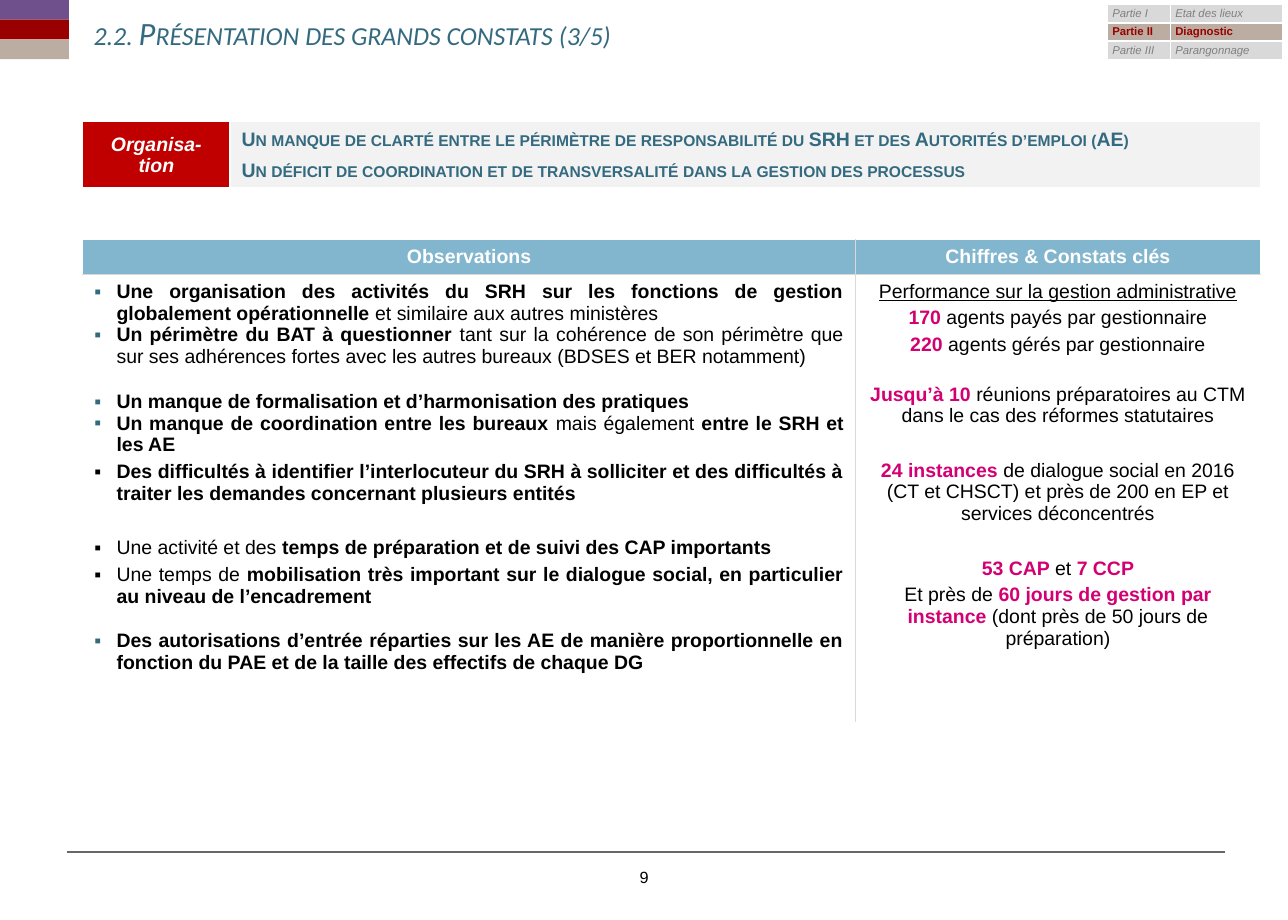
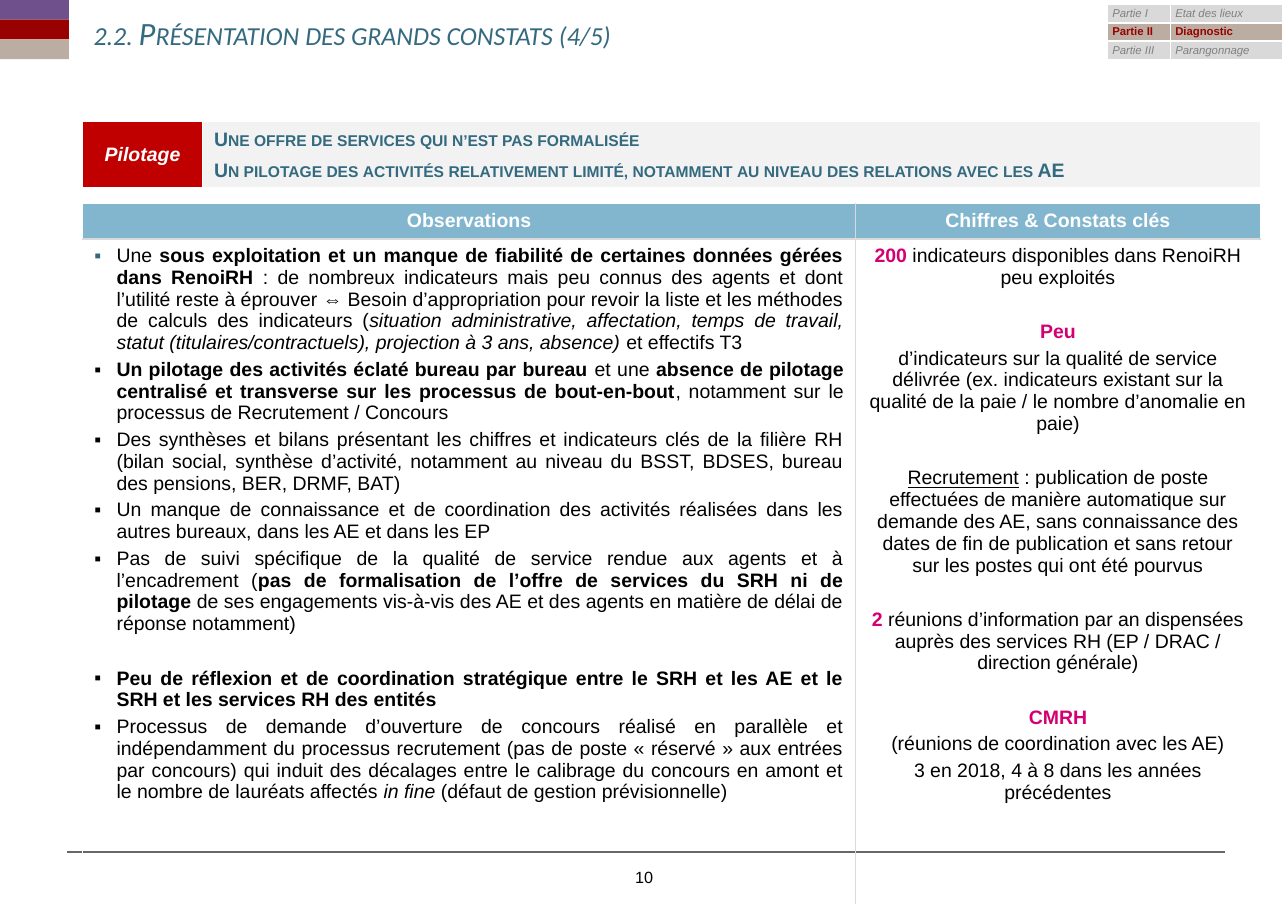
from dataclasses import dataclass
from lxml.etree import SubElement
from pptx import Presentation
from pptx.dml.color import RGBColor
from pptx.enum.shapes import MSO_CONNECTOR, MSO_SHAPE
from pptx.enum.text import MSO_ANCHOR, MSO_AUTO_SIZE, PP_ALIGN
from pptx.oxml.ns import qn
from pptx.util import Cm, Pt

RECT = MSO_SHAPE.RECTANGLE
LINE = MSO_CONNECTOR.STRAIGHT
MIDDLE = MSO_ANCHOR.MIDDLE
FIXED = MSO_AUTO_SIZE.NONE
LEFT = PP_ALIGN.LEFT
CENTER = PP_ALIGN.CENTER
JUST = PP_ALIGN.JUSTIFY


@dataclass(frozen=True)
class Theme:
    white: str = "FFFFFF"
    ink: str = "000000"
    teal: str = "346A7F"
    sky: str = "82B6CE"
    pink: str = "D40073"
    red: str = "C00000"
    wine: str = "990000"
    plum: str = "6F508D"
    sand: str = "BBADA2"
    pale: str = "F2F2F2"
    mist: str = "D9D9D9"
    gray: str = "808080"
    rule: str = "686767"
    font: str = "Arial"
    head: str = "Calibri"
    big: int = 20
    text: int = 12
    foot: int = 10
    tiny: int = 7


T = Theme()
rgb = RGBColor.from_string


def write(frame, rows, size, color, align, face=T.font, caps=False):
    for n, (gap, mark, *runs) in enumerate(rows):
        para = frame.add_paragraph() if n else frame.paragraphs[0]
        para.alignment = align
        if gap:
            para.space_before = Pt(gap)
        props = para._p.get_or_add_pPr()
        if mark:
            props.set("marL", str(Cm(0.48)))
            props.set("indent", str(-Cm(0.48)))
            tint = SubElement(props, qn("a:buClr"))
            SubElement(tint, qn("a:srgbClr")).set("val", mark)
            SubElement(props, qn("a:buFont")).set("typeface", T.font)
            SubElement(props, qn("a:buChar")).set("char", "▪")
        para.font.name = face
        para.font.size = Pt(size)
        para.font.color.rgb = rgb(color)
        if caps:
            props.find(qn("a:defRPr")).set("cap", "small")
        for style, words in runs:
            run = para.add_run()
            run.text = words
            font = para.font if len(runs) == 1 else run.font
            if "b" in style or "k" in style:
                font.bold = True
            if "i" in style:
                font.italic = True
            if "u" in style:
                font.underline = True
            if "k" in style:
                font.color.rgb = rgb(T.pink)


def grid(page, left, top, cols, rows, inner=T.white, low=1):
    table = page.shapes.add_table(
        len(rows), len(cols), Cm(left), Cm(top), Cm(sum(cols)), Cm(sum(rows))
    ).table
    table.first_row = table.horz_banding = False
    for col, width in zip(table.columns, cols):
        col.width = Cm(width)
    for row, height in zip(table.rows, rows):
        row.height = Cm(height)
    for r in range(len(rows)):
        for c in range(len(cols)):
            props = table.cell(r, c)._tc.get_or_add_tcPr()
            last = r == len(rows) - 1
            sides = {"L": c == 0, "R": c == len(cols) - 1, "T": r == 0, "B": last}
            for side, outer in sides.items():
                width = low if side == "B" and last else 1
                edge = SubElement(props, qn("a:ln" + side), w=str(Pt(width)))
                fill = SubElement(edge, qn("a:solidFill"))
                tint = T.white if outer else inner
                SubElement(fill, qn("a:srgbClr")).set("val", tint)
    return table


PARTS = [("Partie I", "Etat des lieux"), ("Partie II", "Diagnostic"),
         ("Partie III", "Parangonnage")]
HEADS = ["Observations", "Chiffres & Constats clés"]
WIDE = 25.6

PAGES = [
    dict(
        part="3/5", num="9", theme="Organisa-tion", side=3.2, top=5.21, deep=9.73,
        claims=[
            "Un manque de clarté entre le périmètre de responsabilité du SRH et des Autorités d’emploi (AE)",
            "Un déficit de coordination et de transversalité dans la gestion des processus",
        ],
        notes=[
            (0, T.teal, ("b", "Une organisation des activités du SRH sur les fonctions de gestion globalement opérationnelle "),
             ("", "et similaire aux autres ministères")),
            (0, T.teal, ("b", "Un périmètre du BAT à questionner "),
             ("", "tant sur la cohérence de son périmètre que sur ses adhérences fortes avec les autres bureaux (BDSES et BER notamment)")),
            (14, T.teal, ("b", "Un manque de formalisation et d’harmonisation des pratiques")),
            (0, T.teal, ("b", "Un manque de coordination entre les bureaux "),
             ("", "mais également "), ("b", "entre le SRH et les AE")),
            (3, T.ink, ("b", "Des difficultés à identifier l’interlocuteur du SRH à solliciter et des difficultés à traiter les demandes concernant plusieurs entités")),
            (20, T.ink, ("", "Une activité et des "),
             ("b", "temps de préparation et de suivi des CAP importants")),
            (3, T.ink, ("", "Une temps de "),
             ("b", "mobilisation très important sur le dialogue social, en particulier au niveau de l’encadrement")),
            (14, T.teal, ("b", "Des autorisations d’entrée réparties sur les AE de manière proportionnelle en fonction du PAE et de la taille des effectifs de chaque DG")),
        ],
        facts=[
            (0, None, ("u", "Performance sur la gestion administrative")),
            (3, None, ("k", "170 "), ("", "agents payés par gestionnaire")),
            (3, None, ("k", "220 "), ("", "agents gérés par gestionnaire")),
            (17, None, ("k", "Jusqu’à 10 "),
             ("", "réunions préparatoires au CTM dans le cas des réformes statutaires")),
            (20, None, ("k", "24 instances "),
             ("", "de dialogue social en 2016 (CT et CHSCT) et près de 200 en EP et services déconcentrés")),
            (20, None, ("k", "53 CAP "), ("", "et "), ("k", "7 CCP")),
            (3, None, ("", "Et près de "), ("k", "60 jours de gestion par instance "),
             ("", "(dont près de 50 jours de préparation)")),
        ],
    ),
    dict(
        part="4/5", num="10", theme="Pilotage", side=2.6, top=4.43, deep=14.48,
        claims=[
            "Une offre de services qui n’est pas formalisée",
            "Un pilotage des activités relativement limité, notamment au niveau des relations avec les AE",
        ],
        notes=[
            (0, T.teal, ("", "Une "),
             ("b", "sous exploitation et un manque de fiabilité de certaines données gérées dans RenoiRH "),
             ("", ": de nombreux indicateurs mais peu connus des agents et dont l’utilité reste à éprouver ⇔ Besoin d’appropriation pour revoir la liste et les méthodes de calculs des indicateurs ("),
             ("i", "situation administrative, affectation, temps de travail, statut (titulaires/contractuels), projection à 3 ans, absence) "),
             ("", "et effectifs T3")),
            (3, T.ink, ("b", "Un pilotage des activités éclaté bureau par bureau "), ("", "et une "),
             ("b", "absence de pilotage centralisé et transverse sur les processus de bout-en-bout"),
             ("", ", notamment sur le processus de Recrutement / Concours")),
            (3, T.ink, ("", "Des synthèses et bilans présentant les chiffres et indicateurs clés de la filière RH (bilan social, synthèse d’activité, notamment au niveau du BSST, BDSES, bureau des pensions, BER, DRMF, BAT)")),
            (3, T.ink, ("", "Un manque de connaissance et de coordination des activités réalisées dans les autres bureaux, dans les AE et dans les EP")),
            (3, T.ink, ("", "Pas de suivi spécifique de la qualité de service rendue aux agents et à l’encadrement ("),
             ("b", "pas de formalisation de l’offre de services du SRH ni de pilotage "),
             ("", "de ses engagements vis-à-vis des AE et des agents en matière de délai de réponse notamment)")),
            (20, T.ink, ("b", "Peu de réflexion et de coordination stratégique entre le SRH et les AE et le SRH et les services RH des entités")),
            (3, T.ink, ("", "Processus de demande d’ouverture de concours réalisé en parallèle et indépendamment du processus recrutement (pas de poste « réservé » aux entrées par concours) qui induit des décalages entre le calibrage du concours en amont et le nombre de lauréats affectés "),
             ("i", "in fine "), ("", "(défaut de gestion prévisionnelle)")),
        ],
        facts=[
            (0, None, ("k", "200 "), ("", "indicateurs disponibles dans RenoiRH peu exploités")),
            (20, None, ("k", "Peu")),
            (3, None, ("", "d’indicateurs sur la qualité de service délivrée (ex. indicateurs existant sur la qualité de la paie / le nombre d’anomalie en paie)")),
            (20, None, ("u", "Recrutement"),
             ("", " : publication de poste effectuées de manière automatique sur demande des AE, sans connaissance des dates de fin de publication et sans retour sur les postes qui ont été pourvus")),
            (20, None, ("k", "2 "),
             ("", "réunions d’information par an dispensées auprès des services RH (EP / DRAC / direction générale)")),
            (20, None, ("k", "CMRH")),
            (3, None, ("", "(réunions de coordination avec les AE)")),
            (3, None, ("", "3 en 2018, 4 à 8 dans les années précédentes")),
        ],
    ),
]

deck = Presentation()
deck.slide_width, deck.slide_height = Cm(28), Cm(20)
layout = deck.slide_layouts[5]
title = layout.placeholders[0]
title.left, title.top, title.width, title.height = Cm(1.78), Cm(0.13), Cm(24.8), Cm(1.17)
slides = [deck.slides.add_slide(layout) for _ in PAGES]

shared = []
for n, color in enumerate([T.plum, T.wine, T.sand]):
    band = slides[0].shapes.add_shape(RECT, 0, Cm(0.43 * n), Cm(1.5), Cm(0.43))
    band.fill.solid()
    band.fill.fore_color.rgb = rgb(color)
    band.line.fill.background()
    band.shadow.inherit = False
    shared.append(band)
rule = slides[0].shapes.add_connector(LINE, Cm(1.45), Cm(18.52), Cm(26.62), Cm(18.52))
rule.line.color.rgb = rgb(T.rule)
rule.line.width = Pt(0.75)
SubElement(rule._element.spPr, qn("a:effectLst"))
shared.append(rule)
for n, item in enumerate(shared):
    item.element[0][0].set("id", str(20 + n))
    layout.shapes.element.append(item.element)

for slide, page in zip(slides, PAGES):
    frame = slide.shapes.title.text_frame
    frame.auto_size = FIXED
    frame.vertical_anchor = MIDDLE
    name = f"2.2. Présentation des grands constats ({page['part']})"
    write(frame, [(0, None, ("i", name))], T.big, T.teal, LEFT, T.head, True)

    frame = slide.shapes.add_textbox(Cm(12.14), Cm(18.54), Cm(3.73), Cm(1.07)).text_frame
    frame.word_wrap = True
    frame.vertical_anchor = MIDDLE
    write(frame, [(0, None, ("", page["num"]))], T.foot, T.ink, CENTER)

    side = page["side"]
    banner = grid(slide, 1.8, 2.63, [side, WIDE - side], [1.35], low=3)
    label, claim = banner.cell(0, 0), banner.cell(0, 1)
    for cell, color in [(label, T.red), (claim, T.pale)]:
        cell.vertical_anchor = MIDDLE
        cell.fill.solid()
        cell.fill.fore_color.rgb = rgb(color)
    write(label.text_frame, [(0, None, ("bi", page["theme"]))], T.text, T.white, CENTER)
    claims = [(6 * n, None, ("b", words)) for n, words in enumerate(page["claims"])]
    write(claim.text_frame, claims, T.text, T.teal, JUST, caps=True)

    main = grid(slide, 1.8, page["top"], [16.8, 8.8], [0.7, page["deep"]], T.mist)
    bodies = [(page["notes"], JUST), (page["facts"], CENTER)]
    for c, (rows, align) in enumerate(bodies):
        head, body = main.cell(0, c), main.cell(1, c)
        head.fill.solid()
        head.fill.fore_color.rgb = rgb(T.sky)
        body.fill.background()
        write(head.text_frame, [(0, None, ("b", HEADS[c]))], T.text, T.white, CENTER)
        write(body.text_frame, rows, T.text, T.ink, align)

    menu = grid(slide, 24.08, 0.1, [1.37, 2.44], [0.36] * len(PARTS))
    for r, names in enumerate(PARTS):
        here = r == 1
        for c, words in enumerate(names):
            cell = menu.cell(r, c)
            cell.vertical_anchor = MIDDLE
            cell.margin_left = cell.margin_right = Cm(0.1)
            cell.margin_top = cell.margin_bottom = Cm(0.05)
            cell.fill.solid()
            cell.fill.fore_color.rgb = rgb(T.sand if here else T.mist)
            row = (0, None, ("b" if here else "i", words))
            write(cell.text_frame, [row], T.tiny, T.wine if here else T.gray, LEFT)

deck.save("out.pptx")
